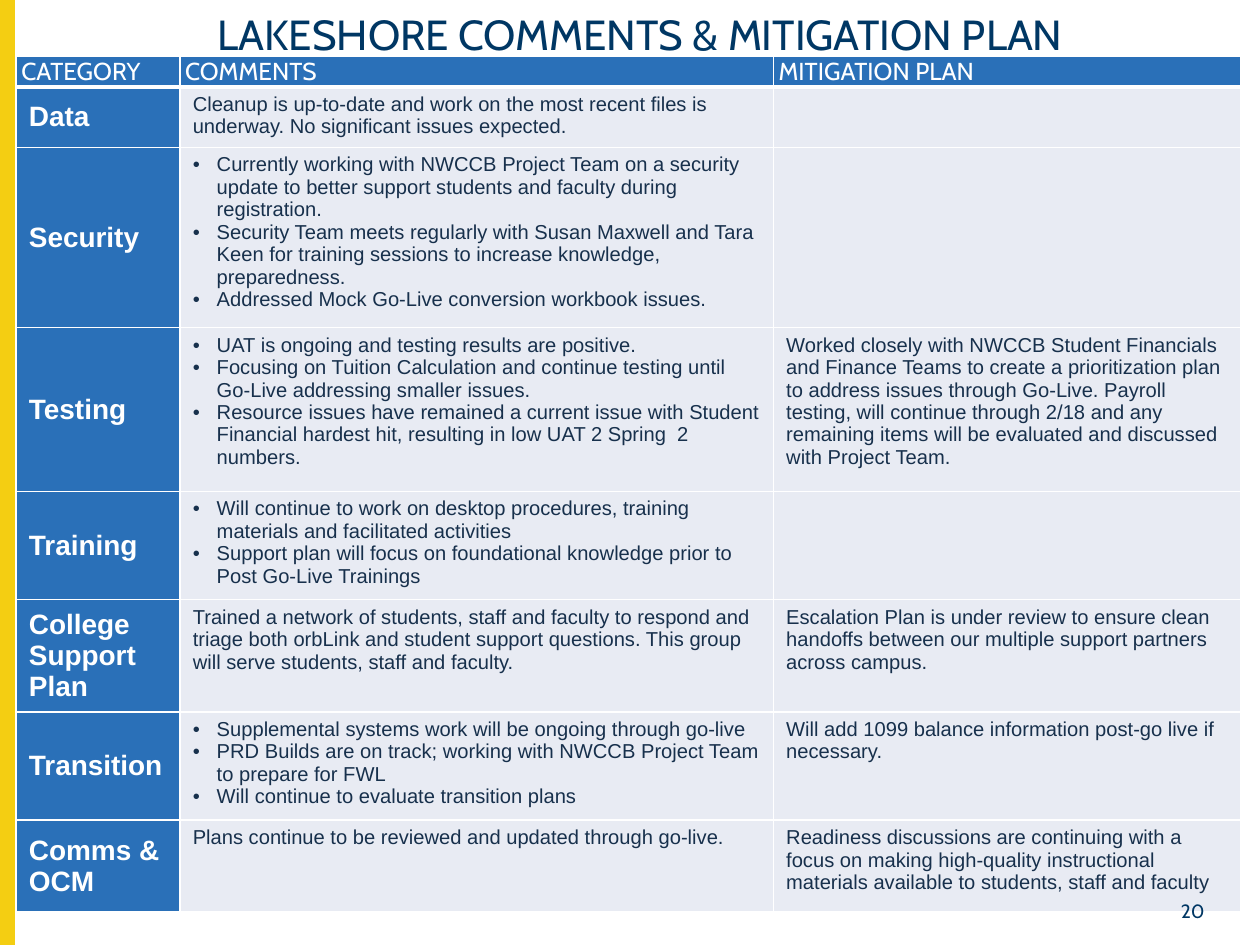
"""Build the comments and mitigation plan slide."""
from dataclasses import dataclass

from pptx import Presentation
from pptx.dml.color import RGBColor
from pptx.enum.shapes import MSO_SHAPE
from pptx.enum.text import MSO_ANCHOR, MSO_AUTO_SIZE, PP_ALIGN
from pptx.oxml.ns import qn
from pptx.util import Inches, Pt
from lxml import etree

RECT = MSO_SHAPE.RECTANGLE
MIDDLE, TOP = MSO_ANCHOR.MIDDLE, MSO_ANCHOR.TOP
CENTER, RIGHT = PP_ALIGN.CENTER, PP_ALIGN.RIGHT
NO_FIT = MSO_AUTO_SIZE.NONE
TITLE_ONLY = 5
GRID_COLS, GRID_ROWS = 100, 75


@dataclass(frozen=True)
class Theme:
    """Colours, fonts and type sizes."""
    navy: str = "003764"
    ink: str = "17304C"
    blue: str = "2A70B8"
    pale: str = "E8EBF3"
    yellow: str = "F4CE12"
    white: str = "FFFFFF"
    display: str = "Cabin"
    body: str = "Arial"
    title_size: float = 24
    category_size: float = 16
    header_size: float = 14
    body_size: float = 11.5
    number_size: float = 11


class Deck:
    """Draw elements on the current slide, placed by grid columns and rows."""

    def __init__(self, prs, theme):
        """Keep the theme and add a title-only slide."""
        self.theme = theme
        self.unit_x = prs.slide_width / GRID_COLS
        self.unit_y = prs.slide_height / GRID_ROWS
        self.s = prs.slides.add_slide(prs.slide_layouts[TITLE_ONLY])

    def x(self, cols):
        """Turn grid columns into a length."""
        return round(cols * self.unit_x)

    def y(self, rows):
        """Turn grid rows into a length."""
        return round(rows * self.unit_y)

    def box(self, left, top, width, height):
        """Turn a grid box into lengths."""
        return self.x(left), self.y(top), self.x(width), self.y(height)

    def run(self, p, text, size, color, font, bold=False):
        """Add one formatted run."""
        r = p.add_run()
        r.text = text
        r.font.size, r.font.name, r.font.bold = Pt(size), font, bold
        r.font.color.rgb = RGBColor.from_string(color)

    def bar(self, at, color):
        """Add a plain filled rectangle."""
        sp = self.s.shapes.add_shape(RECT, *self.box(*at))
        sp.shadow.inherit = False
        sp.fill.solid()
        sp.fill.fore_color.rgb = RGBColor.from_string(color)
        sp.line.color.rgb = RGBColor.from_string(color)
        sp.line.width = Pt(1)

    def title(self, text, at):
        """Move and fill the title placeholder."""
        sp = self.s.shapes.title
        sp.left, sp.top, sp.width, sp.height = self.box(*at)
        tf = sp.text_frame
        tf.auto_size, tf.vertical_anchor = NO_FIT, MIDDLE
        p = tf.paragraphs[0]
        p.alignment, p.line_spacing = CENTER, 0.9
        self.run(p, text, self.theme.title_size, self.theme.navy, self.theme.display)

    def number(self, text, at):
        """Add the slide number."""
        tf = self.s.shapes.add_textbox(*self.box(*at)).text_frame
        tf.word_wrap = True
        p = tf.paragraphs[0]
        p.alignment = RIGHT
        self.run(p, text, self.theme.number_size, self.theme.navy, self.theme.display)

    def bullet(self, p):
        """Give a paragraph a hanging bullet."""
        p_pr = p._p.get_or_add_pPr()
        p_pr.set("marL", str(Inches(0.19)))
        p_pr.set("indent", str(-Inches(0.19)))
        etree.SubElement(p_pr, qn("a:buFont"), typeface=self.theme.body)
        etree.SubElement(p_pr, qn("a:buChar"), char="•")

    def borders(self, cell, bottom):
        """Draw white cell borders with a chosen bottom width."""
        tc_pr = cell._tc.get_or_add_tcPr()
        for i, (side, width) in enumerate((("L", 1), ("R", 1), ("T", 1), ("B", bottom))):
            ln = etree.Element(qn(f"a:ln{side}"), w=str(Pt(width)))
            fill = etree.SubElement(ln, qn("a:solidFill"))
            etree.SubElement(fill, qn("a:srgbClr"), val=self.theme.white)
            tc_pr.insert(i, ln)

    def cell(self, cell, content, fill, style, anchor=TOP, bottom=1):
        """Fill a cell with a text, or with a list of bullets."""
        cell.fill.solid()
        cell.fill.fore_color.rgb = RGBColor.from_string(fill)
        cell.vertical_anchor = anchor
        self.borders(cell, bottom)
        bulleted = isinstance(content, list)
        tf = cell.text_frame
        for i, text in enumerate(content if bulleted else [content]):
            p = tf.paragraphs[0] if i == 0 else tf.add_paragraph()
            if bulleted:
                self.bullet(p)
            if text:
                self.run(p, text, *style)

    def table(self, left, top, widths, heights, header, rows):
        """Add the table with a header row and a category column."""
        t = self.theme
        at = self.box(left, top, sum(widths), sum(heights))
        table = self.s.shapes.add_table(len(heights), len(widths), *at).table
        table.horz_banding = False
        for column, width in zip(table.columns, widths):
            column.width = self.x(width)
        for row, height in zip(table.rows, heights):
            row.height = self.y(height)
        head = (t.header_size, t.white, t.display)
        category = (t.category_size, t.white, t.body, True)
        body = (t.body_size, t.ink, t.body)
        for j, text in enumerate(header):
            cell = table.cell(0, j)
            cell.margin_left, cell.margin_right = Inches(0.04), Inches(0.01)
            cell.margin_top = cell.margin_bottom = 0
            self.cell(cell, text, t.blue, head, MIDDLE, bottom=3)
        for i, (name, *details) in enumerate(rows, 1):
            self.cell(table.cell(i, 0), name, t.blue, category, MIDDLE)
            for j, content in enumerate(details, 1):
                self.cell(table.cell(i, j), content, t.pale, body)


HEADER = ("CATEGORY", "COMMENTS", "MITIGATION PLAN")
ROWS = (
    ("Data", "Cleanup is up-to-date and work on the most recent files is underway. "
     "No significant issues expected.", ""),
    ("Security", [
        "Currently working with NWCCB Project Team on a security update to better support "
        "students and faculty during registration.",
        "Security Team meets regularly with Susan Maxwell and Tara Keen for training sessions "
        "to increase knowledge, preparedness.",
        "Addressed Mock Go-Live conversion workbook issues."], ""),
    ("Testing", [
        "UAT is ongoing and testing results are positive.",
        "Focusing on Tuition Calculation and continue testing until Go-Live addressing "
        "smaller issues.",
        "Resource issues have remained a current issue with Student Financial hardest hit, "
        "resulting in low UAT 2 Spring  2 numbers."],
     "Worked closely with NWCCB Student Financials and Finance Teams to create a prioritization "
     "plan to address issues through Go-Live. Payroll testing, will continue through 2/18 and "
     "any remaining items will be evaluated and discussed with Project Team."),
    ("Training", [
        "Will continue to work on desktop procedures, training materials and facilitated "
        "activities",
        "Support plan will focus on foundational knowledge prior to Post Go-Live Trainings"], ""),
    ("College Support Plan",
     "Trained a network of students, staff and faculty to respond and triage both orbLink and "
     "student support questions. This group will serve students, staff and faculty.",
     "Escalation Plan is under review to ensure clean handoffs between our multiple support "
     "partners across campus."),
    ("Transition", [
        "Supplemental systems work will be ongoing through go-live",
        "PRD Builds are on track; working with NWCCB Project Team to prepare for FWL",
        "Will continue to evaluate transition plans"],
     "Will add 1099 balance information post-go live if necessary."),
    ("Comms & OCM", "Plans continue to be reviewed and updated through go-live.",
     "Readiness discussions are continuing with a focus on making high-quality instructional "
     "materials available to students, staff and faculty"),
)


def main():
    """Build and save the slide."""
    prs = Presentation()
    prs.slide_width, prs.slide_height = Inches(10), Inches(7.5)
    theme = Theme()
    deck = Deck(prs, theme)
    deck.bar((0, 0, 1.1, GRID_ROWS), theme.yellow)
    deck.title("LAKESHORE COMMENTS & MITIGATION PLAN", (3.9, 0.5, 93.8, 4.8))
    deck.table(1.3, 4.5, (13, 47.1, 37.1), (2.4, 4.8, 14.3, 13, 8.6, 8.9, 8.6, 7.3), HEADER, ROWS)
    deck.number("20", (91.5, 70.9, 5.1, 2.6))
    prs.save("out.pptx")


if __name__ == "__main__":
    main()
